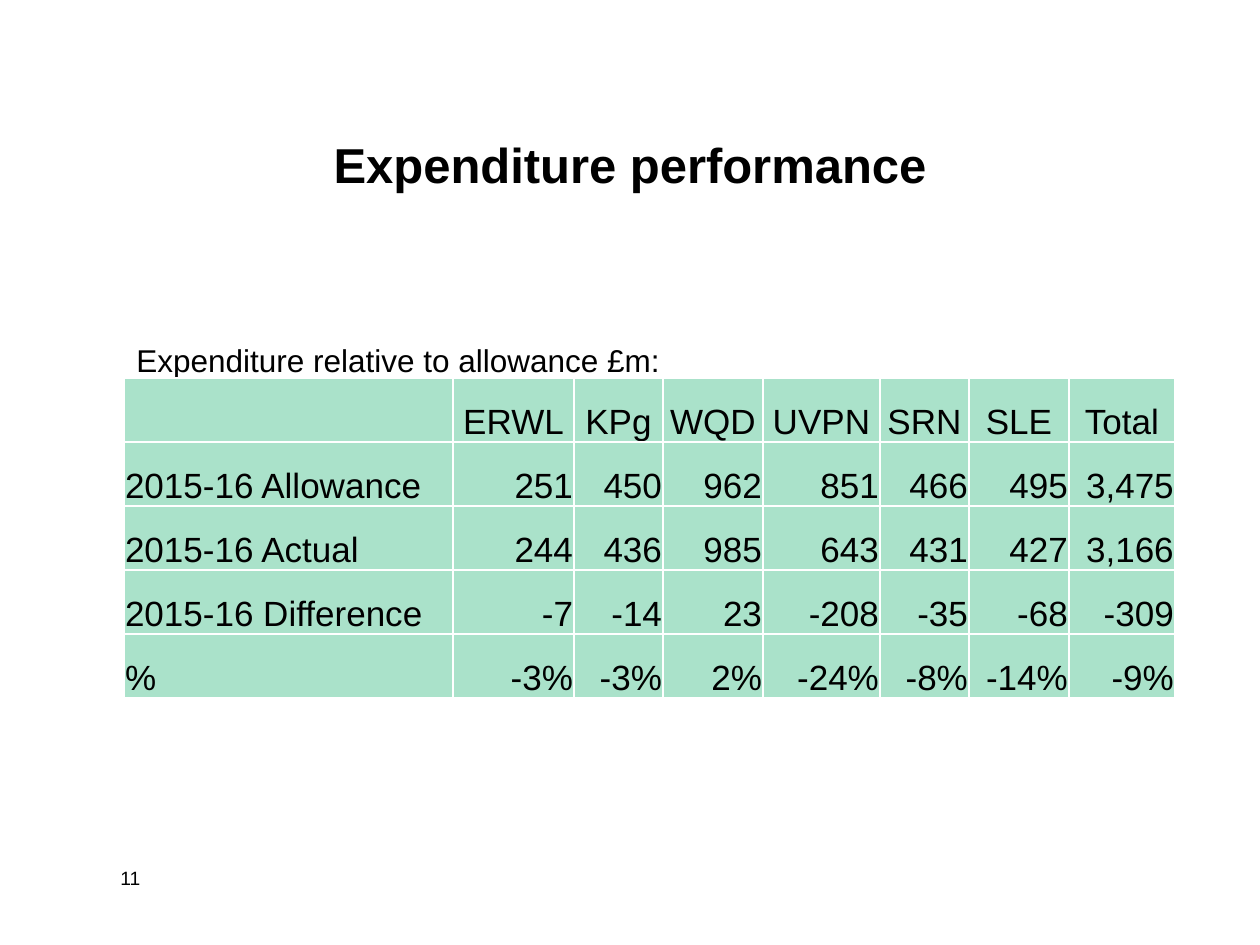
from lxml import etree
from pptx import Presentation
from pptx import util as u
from pptx.dml.color import RGBColor
from pptx.enum import text as t
from pptx.oxml.ns import qn

SCALE = 914400 / 126
BLACK = RGBColor(0x00, 0x00, 0x00)
WHITE = RGBColor(0xFF, 0xFF, 0xFF)
MINT = RGBColor(0xAA, 0xE2, 0xCA)
FONT = "Arial"
LEFT, MID, RIGHT = t.PP_ALIGN.LEFT, t.PP_ALIGN.CENTER, t.PP_ALIGN.RIGHT

COLS = [329, 121, 89, 100, 117, 89, 100, 106]
ROW = 64
DATA = [
    ["", "ERWL", "KPg", "WQD", "UVPN", "SRN", "SLE", "Total"],
    ["2015-16 Allowance", "251", "450", "962", "851", "466", "495", "3,475"],
    ["2015-16 Actual", "244", "436", "985", "643", "431", "427", "3,166"],
    ["2015-16 Difference", "-7", "-14", "23", "-208", "-35", "-68", "-309"],
    ["%", "-3%", "-3%", "2%", "-24%", "-8%", "-14%", "-9%"],
]


def px(n):
    return u.Emu(round(n * SCALE))


def write(frame, words, size, bold=False, align=LEFT):
    para = frame.paragraphs[0]
    para.alignment = align
    para.text = words
    font = para.font
    font.name, font.size, font.bold = FONT, u.Pt(size), bold
    font.color.rgb = BLACK


def label(slide, words, box, anchor=t.MSO_ANCHOR.TOP, **style):
    frame = slide.shapes.add_textbox(*map(px, box)).text_frame
    frame.word_wrap = True
    frame.vertical_anchor = anchor
    write(frame, words, **style)


def edge(cell):
    """Draw a thin white line on all four sides of a cell."""
    props = cell._tc.get_or_add_tcPr()
    for side in ("a:lnL", "a:lnR", "a:lnT", "a:lnB"):
        line = etree.SubElement(props, qn(side), w=str(u.Pt(1)))
        fill = etree.SubElement(line, qn("a:solidFill"))
        etree.SubElement(fill, qn("a:srgbClr"), val=str(WHITE))


def style_cell(cell, words, align):
    edge(cell)
    cell.fill.solid()
    cell.fill.fore_color.rgb = MINT
    cell.margin_left = cell.margin_right = cell.margin_top = px(1)
    cell.margin_bottom = 0
    cell.vertical_anchor = t.MSO_ANCHOR.BOTTOM
    write(cell.text_frame, words, size=20, align=align)


def add_grid(slide, left, top):
    box = (left, top, sum(COLS), ROW * len(DATA))
    grid = slide.shapes.add_table(len(DATA), len(COLS), *map(px, box)).table
    for col, width in zip(grid.columns, COLS):
        col.width = px(width)
    for r, line in enumerate(DATA):
        grid.rows[r].height = px(ROW)
        for c, words in enumerate(line):
            align = LEFT if c == 0 else MID if r == 0 else RIGHT
            style_cell(grid.cell(r, c), words, align)


def main():
    deck = Presentation()
    deck.slide_width, deck.slide_height = px(1260), px(945)
    slide = deck.slides.add_slide(deck.slide_layouts[6])
    label(slide, "Expenditure performance", (95, 85, 1070, 158),
          anchor=t.MSO_ANCHOR.MIDDLE, size=28, bold=True, align=MID)
    label(slide, "11", (108, 860, 262, 63), size=11)
    label(slide, "Expenditure relative to allowance £m:",
          (124, 335, 912, 139), size=18)
    add_grid(slide, 124, 378)
    deck.save("out.pptx")


if __name__ == "__main__":
    main()
